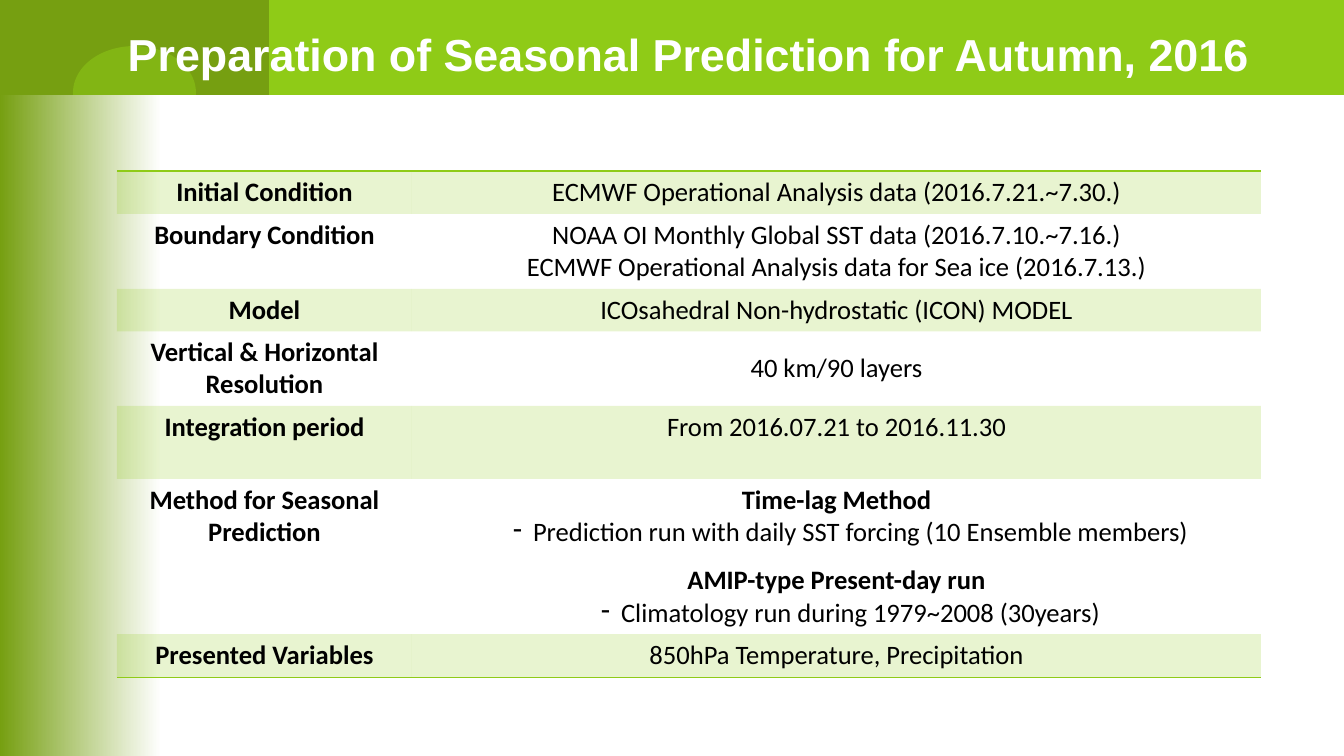
from lxml import etree
from pptx import Presentation
from pptx import util as u
from pptx.dml.color import RGBColor
from pptx.enum import shapes, text
from pptx.oxml.ns import qn

PX = 914400 / 100.8
COLORS = {"lime": "8FCB17", "olive": "769F11", "white": "FFFFFF", "black": "000000"}
NO_STYLE = "{2D5ABB26-0587-4C30-8999-92F81FD0307C}"

COLUMNS = [295, 849]
ROW_HEIGHTS = [42, 43, 75, 42, 74, 73, 155, 43]
SETTINGS = [
    ("Initial Condition", [("plain", "ECMWF Operational Analysis data (2016.7.21.~7.30.)")]),
    ("Boundary Condition", [
        ("plain", "NOAA OI Monthly Global SST data (2016.7.10.~7.16.)"),
        ("plain", "ECMWF Operational Analysis data for Sea ice (2016.7.13.)"),
    ]),
    ("Model", [("plain", "ICOsahedral Non-hydrostatic (ICON) MODEL")]),
    ("Vertical & Horizontal Resolution", [("plain", "40 km/90 layers")]),
    ("Integration period", [("top", "From 2016.07.21 to 2016.11.30")]),
    ("Method for Seasonal Prediction", [
        ("head", "Time-lag Method"),
        ("bullet", "Prediction run with daily SST forcing (10 Ensemble members)"),
        ("spaced head", "AMIP-type Present-day run"),
        ("bullet", "Climatology run during 1979~2008 (30years)"),
    ]),
    ("Presented Variables", [("plain", "850hPa Temperature, Precipitation")]),
]


def px(n):
    return u.Emu(round(n * PX))


def rgb(name):
    return RGBColor.from_string(COLORS[name])


class Deck:
    def __init__(self, width, height):
        self.prs = Presentation()
        self.prs.slide_width, self.prs.slide_height = px(width), px(height)
        self.s = self.prs.slides.add_slide(self.prs.slide_layouts[5])

    def fill(self, fill, color, alpha=100):
        fill.solid()
        fill.fore_color.rgb = rgb(color)
        if alpha < 100:
            clr = fill._xPr.find(qn("a:solidFill"))[0]
            etree.SubElement(clr, qn("a:alpha"), val=str(alpha * 1000))

    def shape(self, kind, box, color, alpha=100):
        sp = self.s.shapes.add_shape(kind, *map(px, box))
        sp.shadow.inherit = False
        sp.line.fill.background()
        self.fill(sp.fill, color, alpha)
        return sp

    def fade(self, box, start, end, stop):
        sp = self.shape(shapes.MSO_SHAPE.RECTANGLE, box, end)
        sp.fill.gradient()
        sp.fill.gradient_angle = 0
        for gs, color, pos in zip(sp.fill.gradient_stops, (start, end), (0, stop)):
            gs.color.rgb = rgb(color)
            gs.position = pos

    def style(self, p, font, size, color, bold):
        p.alignment = text.PP_ALIGN.CENTER
        for r in p.runs:
            r.font.name, r.font.size, r.font.bold = font, u.Pt(size), bold
            r.font.color.rgb = rgb(color)

    def title(self, box, words):
        sp = self.s.shapes.title
        sp.left, sp.top, sp.width, sp.height = map(px, box)
        tf = sp.text_frame
        tf.text = words
        tf.word_wrap = True
        tf.auto_size = text.MSO_AUTO_SIZE.NONE
        tf.vertical_anchor = text.MSO_ANCHOR.MIDDLE
        self.style(tf.paragraphs[0], "Arial", 32, "white", True)
        self.s.shapes._spTree.append(sp._element)

    def bullet(self, p, char, margin, hang):
        pPr = p._p.get_or_add_pPr()
        pPr.set("marL", str(px(margin)))
        pPr.set("indent", str(-px(hang)))
        etree.SubElement(pPr, qn("a:buChar"), char=char)

    def bottom_border(self, cell, color):
        ln = etree.Element(qn("a:lnB"), w=str(u.Pt(1)))
        fill = etree.SubElement(ln, qn("a:solidFill"))
        etree.SubElement(fill, qn("a:srgbClr"), val=COLORS[color])
        cell._tc.get_or_add_tcPr().insert(0, ln)

    def cell(self, cell, lines):
        tf = cell.text_frame
        tf.text = "\n".join(words for _, words in lines)
        for p, (kind, _) in zip(tf.paragraphs, lines):
            self.style(p, "Calibri", 19, "black", "head" in kind)
            if kind == "spaced head":
                p.line_spacing = 1.5
            if kind == "bullet":
                self.bullet(p, "-", 48, 20)

    def table(self, left, top, columns, heights, rows):
        box = (left, top, sum(columns), sum(heights))
        table = self.s.shapes.add_table(len(heights), len(columns), *map(px, box)).table
        table._tbl.tblPr.find(qn("a:tableStyleId")).text = NO_STYLE
        for col, width in zip(table.columns, columns):
            col.width = px(width)
        for i, height in enumerate(heights):
            table.rows[i].height = px(height)
            for cell in table.rows[i].cells:
                if i % 2:
                    self.fill(cell.fill, "lime", 20)
                else:
                    cell.fill.background()
                if i in (0, len(heights) - 1):
                    self.bottom_border(cell, "lime")
        for i, (label, lines) in enumerate(rows, 1):
            self.cell(table.cell(i, 0), [("head", label)])
            value = table.cell(i, 1)
            self.cell(value, lines)
            if lines[0][0] != "top":
                value.vertical_anchor = text.MSO_ANCHOR.MIDDLE


def main():
    deck = Deck(1344, 756)
    rect, oval = shapes.MSO_SHAPE.RECTANGLE, shapes.MSO_SHAPE.OVAL
    deck.shape(rect, (0, 0, 1344, 184), "lime")
    deck.shape(rect, (0, 0, 269, 184), "olive")
    deck.shape(oval, (73, 46, 123, 93), "lime", 50)
    deck.fade((0, 95, 1344, 661), "olive", "white", 0.12)
    deck.title((17, 15, 1344, 77), "Preparation of Seasonal Prediction for Autumn, 2016")
    deck.table(117, 129, COLUMNS, ROW_HEIGHTS, SETTINGS)
    deck.prs.save("out.pptx")


if __name__ == "__main__":
    main()
